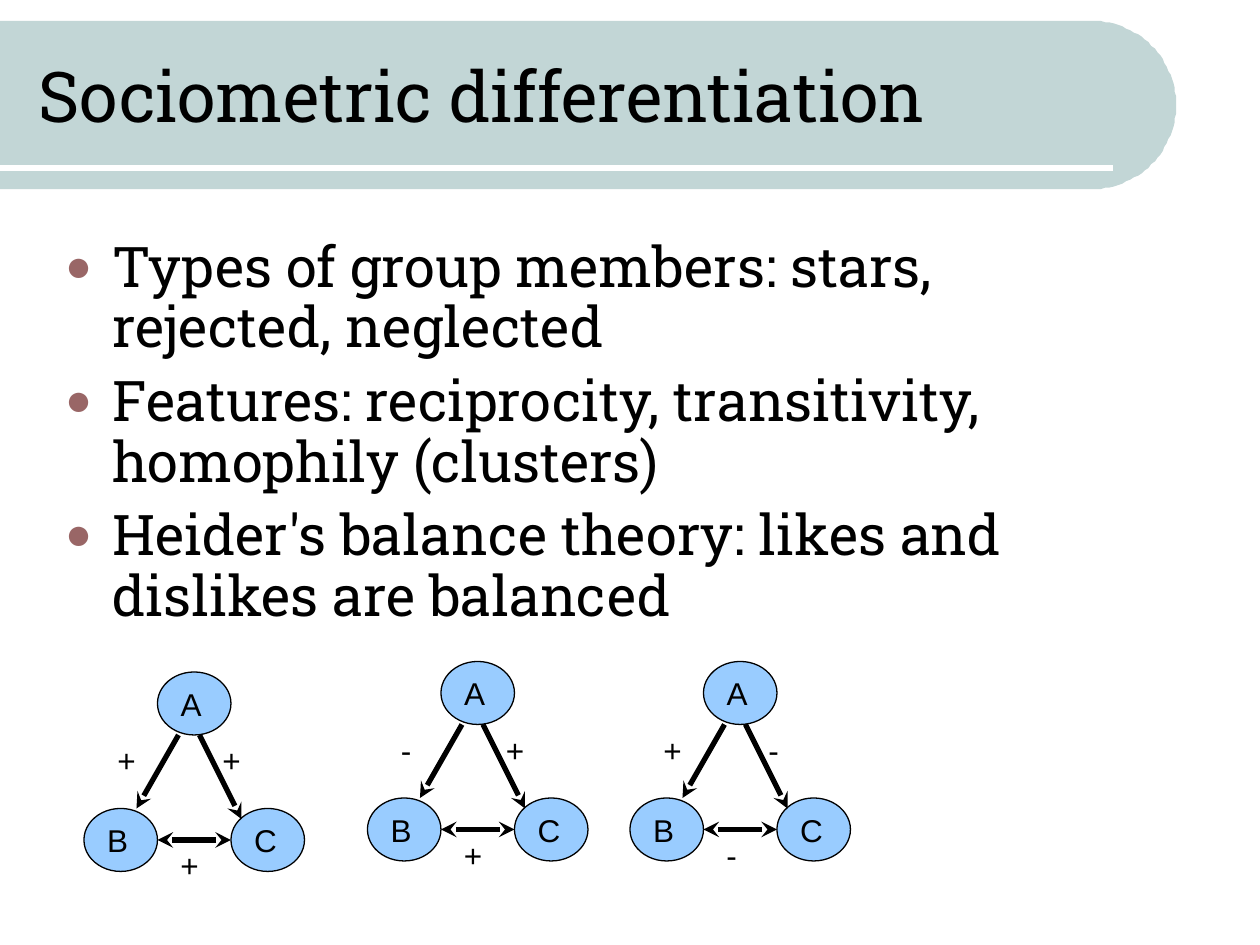
"""Build the sociometric differentiation slide with three balance-theory triads."""
import math
from typing import NamedTuple

from lxml import etree
from pptx import Presentation
from pptx import util as u
from pptx.dml.color import RGBColor
from pptx.enum import shapes, text
from pptx.oxml import ns

PX = 9525
COLORS = {"band": "C2D6D6", "rule": "FFFFFF", "ink": "000000", "bullet": "996666", "node": "99CCFF"}
HEADING_FONT, DIAGRAM_FONT = "Roboto Slab", "Arial"
BULLETS = [
    "Types of group members: stars, rejected, neglected",
    "Features: reciprocity, transitivity, homophily (clusters)",
    "Heider's balance theory: likes and dislikes are balanced",
]


class Triad(NamedTuple):
    left: int
    top: int
    signs: str


class Node(NamedTuple):
    name: str
    x: int
    y: int


class Edge(NamedTuple):
    start: tuple[int, int]
    end: tuple[int, int]
    label: tuple[int, int]
    arrows: tuple[str, ...]


TRIADS = [Triad(64, 512, "+++"), Triad(280, 504, "-++"), Triad(480, 504, "+--")]
NODES = [Node("B", 0, 104), Node("A", 56, 0), Node("C", 112, 104)]
EDGES = [
    Edge((72, 48), (40, 104), (16, 48), ("tailEnd",)),
    Edge((88, 48), (120, 112), (96, 48), ("tailEnd",)),
    Edge((112, 128), (56, 128), (64, 128), ("headEnd", "tailEnd")),
]


def color(name: str) -> RGBColor:
    return RGBColor.from_string(COLORS[name])


def px(*lengths: int) -> list[int]:
    return [u.Emu(length * PX) for length in lengths]


def place(shape, left: int, top: int, width: int, height: int) -> None:
    shape.left, shape.top, shape.width, shape.height = px(left, top, width, height)


def set_font(paragraph, name: str, size: int) -> None:
    paragraph.alignment = text.PP_ALIGN.LEFT
    paragraph.font.name = name
    paragraph.font.size = u.Pt(size)
    paragraph.font.color.rgb = color("ink")


def add_line(slide, start: tuple[int, int], end: tuple[int, int], ink: str, arrows: tuple[str, ...] = ()):
    line = slide.shapes.add_connector(shapes.MSO_CONNECTOR.STRAIGHT, *px(*start, *end))
    line.line.color.rgb = color(ink)
    line.line.width = u.Pt(3)
    for arrow in arrows:
        etree.SubElement(line.line._get_or_add_ln(), ns.qn(f"a:{arrow}"), type="stealth")
    etree.SubElement(line.element.spPr, ns.qn("a:effectLst"))
    return line


def add_band(slide, right: int, top: int, bottom: int):
    radius = (bottom - top) // 2
    angles = [math.radians(degrees) for degrees in range(-90, 91, 3)]
    arc = [(right - radius + radius * math.cos(angle), top + radius + radius * math.sin(angle)) for angle in angles]
    builder = slide.shapes.build_freeform(0, top, scale=PX)
    builder.add_line_segments([*arc, (0, bottom)], close=True)
    band = builder.convert_to_shape()
    band.shadow.inherit = False
    band.fill.solid()
    band.fill.fore_color.rgb = color("band")
    band.line.fill.background()
    return band


def add_header(slide) -> None:
    title = slide.shapes.title
    for backdrop in (add_band(slide, 896, 16, 144), add_line(slide, (0, 128), (848, 128), "rule")):
        title.element.addprevious(backdrop.element)
    place(title, 20, 24, 842, 96)
    title.text_frame.text = "Sociometric differentiation"
    title.text_frame.vertical_anchor = text.MSO_ANCHOR.MIDDLE
    set_font(title.text_frame.paragraphs[0], HEADING_FONT, 40)


def add_bullets(slide) -> None:
    body = slide.placeholders[1]
    place(body, 40, 128, 808, 432)
    frame = body.text_frame
    frame.text = "\n".join(BULLETS)
    frame.auto_size = text.MSO_AUTO_SIZE.NONE
    frame.margin_top = px(54)[0]
    for paragraph in frame.paragraphs:
        set_font(paragraph, HEADING_FONT, 32)
        paragraph.line_spacing = 0.9
        paragraph.space_before = u.Pt(7.5)
        properties = paragraph._p.get_or_add_pPr()
        properties.set("marL", str(36 * PX))
        properties.set("indent", str(-36 * PX))
        bullet_color = etree.Element(ns.qn("a:buClr"))
        etree.SubElement(bullet_color, ns.qn("a:srgbClr"), val=COLORS["bullet"])
        bullet_size = etree.Element(ns.qn("a:buSzPct"), val="80000")
        bullet = etree.Element(ns.qn("a:buChar"), char="●")
        properties.find(ns.qn("a:defRPr")).addprevious(bullet_color)
        bullet_color.addnext(bullet_size)
        bullet_size.addnext(bullet)


def add_node(slide, triad: Triad, node: Node) -> None:
    oval = slide.shapes.add_shape(shapes.MSO_SHAPE.OVAL, *px(triad.left + node.x, triad.top + node.y, 56, 48))
    oval.shadow.inherit = False
    oval.fill.solid()
    oval.fill.fore_color.rgb = color("node")
    oval.line.color.rgb = color("ink")
    oval.line.width = u.Pt(0.75)
    oval.text_frame.text = node.name
    oval.text_frame.word_wrap = False
    oval.text_frame.vertical_anchor = text.MSO_ANCHOR.MIDDLE
    set_font(oval.text_frame.paragraphs[0], DIAGRAM_FONT, 18)


def add_sign(slide, left: int, top: int, sign: str) -> None:
    frame = slide.shapes.add_textbox(*px(left, top, 40, 38)).text_frame
    frame.text = sign
    frame.word_wrap = True
    set_font(frame.paragraphs[0], DIAGRAM_FONT, 18)


def add_triad(slide, triad: Triad) -> None:
    for node in NODES:
        add_node(slide, triad, node)
    for edge, sign in zip(EDGES, triad.signs):
        start, end, label = (
            (triad.left + x, triad.top + y) for x, y in (edge.start, edge.end, edge.label)
        )
        add_line(slide, start, end, "ink", edge.arrows)
        add_sign(slide, *label, sign)


def main() -> None:
    presentation = Presentation()
    presentation.slide_width, presentation.slide_height = px(960, 720)
    slide = presentation.slides.add_slide(presentation.slide_layouts[1])
    add_header(slide)
    add_bullets(slide)
    for triad in TRIADS:
        add_triad(slide, triad)
    presentation.save("out.pptx")


if __name__ == "__main__":
    main()
